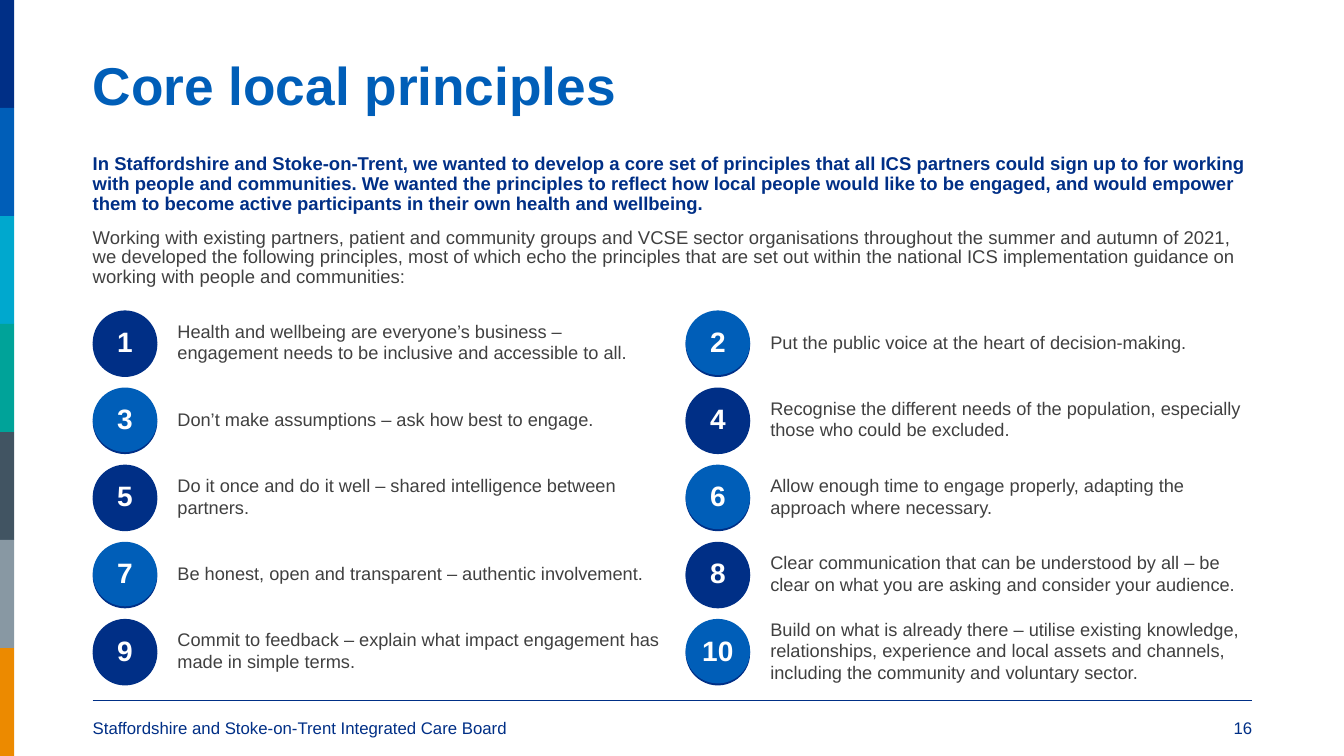
from lxml import etree
from pptx import Presentation
from pptx.dml import color
from pptx.enum import shapes, text
from pptx.oxml import ns
from pptx.util import Inches, Pt

# Content
TITLE = "Core local principles"
INTRO = (
    "In Staffordshire and Stoke-on-Trent, we wanted to develop a core set of principles that all ICS "
    "partners could sign up to for working with people and communities. We wanted the principles to "
    "reflect how local people would like to be engaged, and would empower them to become active "
    "participants in their own health and wellbeing."
)
BACKGROUND = (
    "Working with existing partners, patient and community groups and VCSE sector organisations "
    "throughout the summer and autumn of 2021, we developed the following principles, most of which "
    "echo the principles that are set out within the national ICS implementation guidance on working "
    "with people and communities:"
)
PRINCIPLES = [
    "Health and wellbeing are everyone’s business – engagement needs to be inclusive and accessible to all.",
    "Put the public voice at the heart of decision-making.",
    "Don’t make assumptions – ask how best to engage.",
    "Recognise the different needs of the population, especially those who could be excluded.",
    "Do it once and do it well – shared intelligence between partners.",
    "Allow enough time to engage properly, adapting the approach where necessary.",
    "Be honest, open and transparent – authentic involvement.",
    "Clear communication that can be understood by all – be clear on what you are asking and "
    "consider your audience.",
    "Commit to feedback – explain what impact engagement has made in simple terms.",
    "Build on what is already there – utilise existing knowledge, relationships, experience and "
    "local assets and channels, including the community and voluntary sector.",
]
FOOTER = "Staffordshire and Stoke-on-Trent Integrated Care Board"
PAGE_NUMBER = "16"

NAVY, BLUE, GREY, WHITE = "002F86", "005EB8", "404040", "FFFFFF"
STRIPES = [NAVY, BLUE, "00A8CE", "00A399", "415462", "8898A3", "EC8A00"]

# Layout, in inches
WIDTH, HEIGHT = 13.33, 7.5
LEFT, RIGHT = 0.92, 12.42
STRIPE_WIDTH = 0.14
COLUMNS = [LEFT, 6.8]
FIRST_ROW, LAST_ROW, ROWS = 3.08, 6.14, 5
CIRCLE, LABEL_OFFSET, LABEL_WIDTH = 0.64, 0.84, 4.78
SHADOW_DROP = 0.02
FOOTER_TOP, FOOTER_HEIGHT = 7.07, 0.3

presentation = Presentation()
presentation.slide_width, presentation.slide_height = Inches(WIDTH), Inches(HEIGHT)
slide = presentation.slides.add_slide(presentation.slide_layouts[6])


def rgb(value):
    return color.RGBColor.from_string(value)


def box(left, top, width, height):
    return [Inches(value) for value in (left, top, width, height)]


def add_filled(kind, place, fill):
    shape = slide.shapes.add_shape(kind, *box(*place))
    shape.shadow.inherit = False
    shape.fill.solid()
    shape.fill.fore_color.rgb = rgb(fill)
    shape.line.fill.background()
    return shape


def write(shape, paragraphs, size, align="LEFT", anchor="MIDDLE", spacing=None, before=0, inset=0):
    """Fill a shape with (words, colour, bold) paragraphs."""
    frame = shape.text_frame
    frame.word_wrap = True
    frame.vertical_anchor = getattr(text.MSO_ANCHOR, anchor)
    frame.margin_left = frame.margin_right = 0
    frame.margin_top = frame.margin_bottom = Inches(inset)
    for index, (words, colour, bold) in enumerate(paragraphs):
        paragraph = frame.add_paragraph() if index else frame.paragraphs[0]
        paragraph.alignment = getattr(text.PP_ALIGN, align)
        paragraph.line_spacing = spacing
        paragraph.space_before = Pt(before)
        run = paragraph.add_run()
        run.text = words
        run.font.name, run.font.size, run.font.bold = "Arial", Pt(size), bold
        run.font.color.rgb = rgb(colour)


def add_text(place, paragraphs, size, **style):
    write(slide.shapes.add_textbox(*box(*place)), paragraphs, size, **style)


def add_drop_shadow(shape):
    """Put a hard navy edge under the shape."""
    effects = shape._element.spPr.find(ns.qn("a:effectLst"))
    shadow = etree.SubElement(effects, ns.qn("a:outerShdw"), dist=str(Inches(SHADOW_DROP)),
                              dir="5400000", algn="t", rotWithShape="0")
    etree.SubElement(shadow, ns.qn("a:srgbClr"), val=NAVY)


# Footer rule and colour stripes
rule = slide.shapes.add_connector(shapes.MSO_CONNECTOR.STRAIGHT, Inches(LEFT), Inches(6.95),
                                  Inches(RIGHT), Inches(6.95))
rule.line.color.rgb = rgb(NAVY)
rule.line.width = Pt(1)
etree.SubElement(rule._element.spPr, ns.qn("a:effectLst"))

stripe_height = HEIGHT / len(STRIPES)
for index, fill in enumerate(STRIPES):
    add_filled(shapes.MSO_SHAPE.RECTANGLE, (0, index * stripe_height, STRIPE_WIDTH, stripe_height), fill)

# Title and introduction
add_text((LEFT, 0.53, RIGHT - LEFT, 0.7), [(TITLE, BLUE, True)], 38, spacing=0.9)
add_text((LEFT, 1.53, RIGHT - LEFT, 1.44), [(INTRO, NAVY, True), (BACKGROUND, GREY, False)], 13.2,
         anchor="TOP", spacing=0.9, before=10)

# Numbered principles, two to a row, colours alternating like a chessboard
row_pitch = (LAST_ROW - FIRST_ROW) / (ROWS - 1)
for index, principle in enumerate(PRINCIPLES):
    row, column = divmod(index, len(COLUMNS))
    left, top = COLUMNS[column], FIRST_ROW + row * row_pitch
    fill = (NAVY, BLUE)[(row + column) % 2]
    circle = add_filled(shapes.MSO_SHAPE.OVAL, (left, top, CIRCLE, CIRCLE), fill)
    add_drop_shadow(circle)
    write(circle, [(str(index + 1), WHITE, True)], 20, align="CENTER", spacing=0.98, before=10)
    add_text((left + LABEL_OFFSET, top, LABEL_WIDTH, CIRCLE), [(principle, GREY, False)], 13,
             spacing=0.98, before=10)

# Footer
add_text((LEFT, FOOTER_TOP, 8, FOOTER_HEIGHT), [(FOOTER, NAVY, False)], 12, anchor="TOP", inset=0.05)
add_text((RIGHT - 3, FOOTER_TOP, 3, FOOTER_HEIGHT), [(PAGE_NUMBER, NAVY, False)], 12,
         align="RIGHT", anchor="TOP", inset=0.05)

presentation.save("out.pptx")
